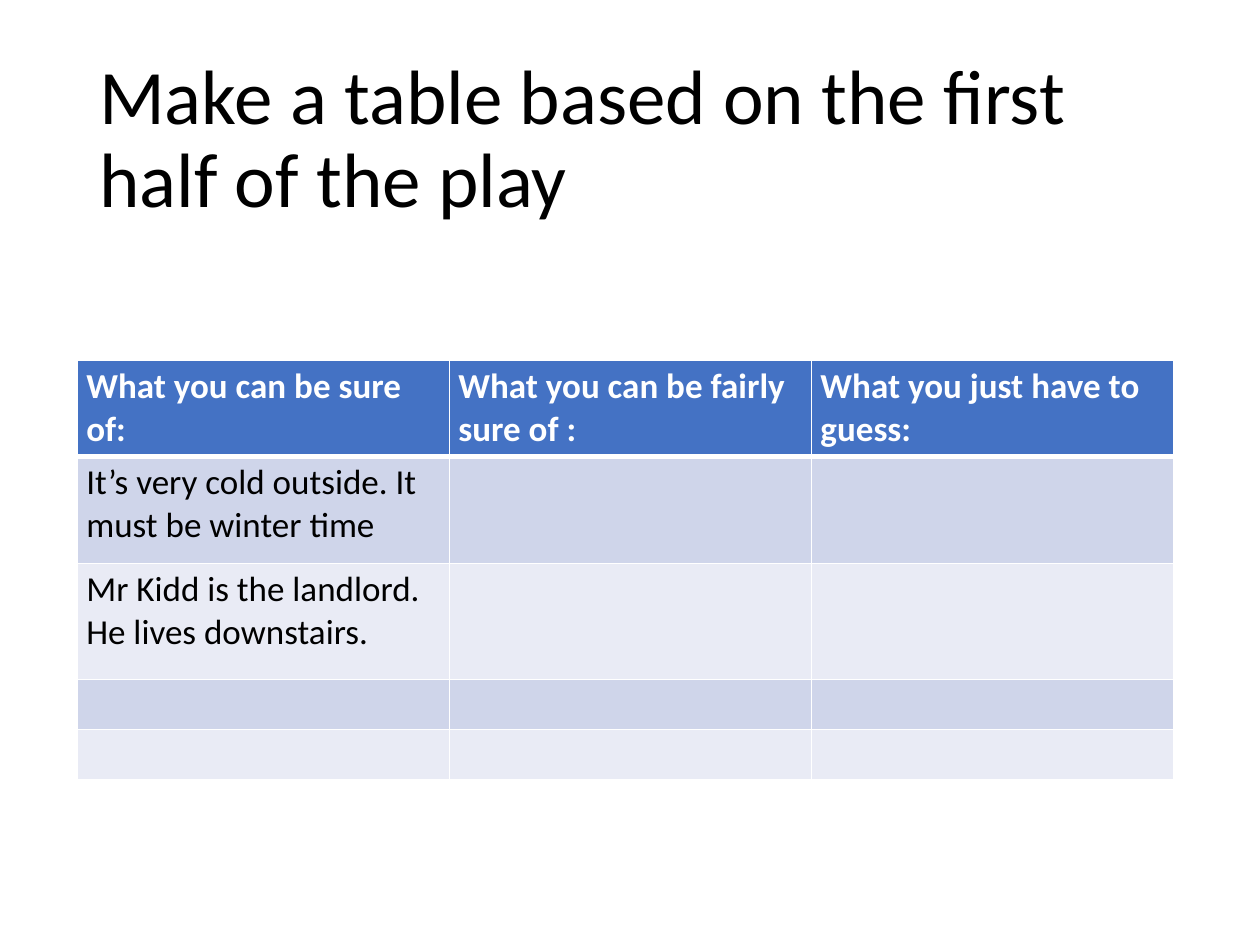
from lxml import etree
from pptx import Presentation
from pptx import util as u
from pptx.dml.color import RGBColor
from pptx.enum import text
from pptx.oxml import ns

COLORS = {
    "ink": "000000",
    "white": "FFFFFF",
    "header": "4472C4",
    "odd": "CFD5EA",
    "even": "E9EBF5",
}
COLUMN_WIDTHS = [7.5, 7.3, 7.3]
ROW_HEIGHTS = [1.93, 2.16, 2.34, 1.01, 1.01]
ROWS = [
    ["What you can be sure of:", "What you can be fairly sure of :", "What you just have to guess:"],
    ["It’s very cold outside. It must be winter time"],
    ["Mr Kidd is the landlord. He lives downstairs."],
]


class SlideBuilder:
    def __init__(self, slide, font="Calibri"):
        self.slide = slide
        self.font = font

    def color(self, name):
        return RGBColor.from_string(COLORS[name])

    def set_text(self, frame, words, size, color, bold=False):
        frame.text = words
        for para in frame.paragraphs:
            for span in para.runs:
                span.font.name = self.font
                span.font.size = u.Pt(size)
                span.font.bold = bold
                span.font.color.rgb = self.color(color)

    def title(self, words, left, top, width, height):
        box = self.slide.shapes.add_textbox(u.Cm(left), u.Cm(top), u.Cm(width), u.Cm(height))
        frame = box.text_frame
        frame.word_wrap = True
        frame.vertical_anchor = text.MSO_ANCHOR.MIDDLE
        self.set_text(frame, words, 44, "ink")
        frame.paragraphs[0].line_spacing = 0.9

    def border(self, cell, side, points):
        properties = cell._tc.get_or_add_tcPr()
        line = etree.SubElement(properties, ns.qn(f"a:ln{side}"), w=str(u.Pt(points)))
        fill = etree.SubElement(line, ns.qn("a:solidFill"))
        etree.SubElement(fill, ns.qn("a:srgbClr"), val=COLORS["white"])

    def style_cell(self, cell, row):
        """Set margins, borders and fill; borders go first, as the schema asks."""
        cell.margin_left = cell.margin_right = u.Cm(0.18)
        cell.margin_top = cell.margin_bottom = u.Cm(0.1)
        thick_side = {0: "B", 1: "T"}.get(row)
        for side in "LRTB":
            self.border(cell, side, 3 if side == thick_side else 1)
        cell.fill.solid()
        band = "header" if row == 0 else "odd" if row % 2 else "even"
        cell.fill.fore_color.rgb = self.color(band)

    def table(self, rows, left, top, widths, heights):
        frame = self.slide.shapes.add_table(
            len(heights), len(widths), u.Cm(left), u.Cm(top), u.Cm(sum(widths)), u.Cm(sum(heights))
        )
        table = frame.table
        for column, width in zip(table.columns, widths):
            column.width = u.Cm(width)
        for index, height in enumerate(heights):
            table.rows[index].height = u.Cm(height)
            for cell in table.rows[index].cells:
                self.style_cell(cell, index)
        for index, row in enumerate(rows):
            is_header = index == 0
            for cell, words in zip(table.rows[index].cells, row):
                self.set_text(cell.text_frame, words, 20, "white" if is_header else "ink", is_header)


def main():
    deck = Presentation()
    deck.slide_width, deck.slide_height = u.Cm(25.4), u.Cm(19.05)
    page = SlideBuilder(deck.slides.add_slide(deck.slide_layouts[6]))
    page.title("Make a table based on the first half of the play", 1.75, 1.01, 21.9, 3.68)
    page.table(ROWS, 1.56, 7.27, COLUMN_WIDTHS, ROW_HEIGHTS)
    deck.save("out.pptx")


if __name__ == "__main__":
    main()
